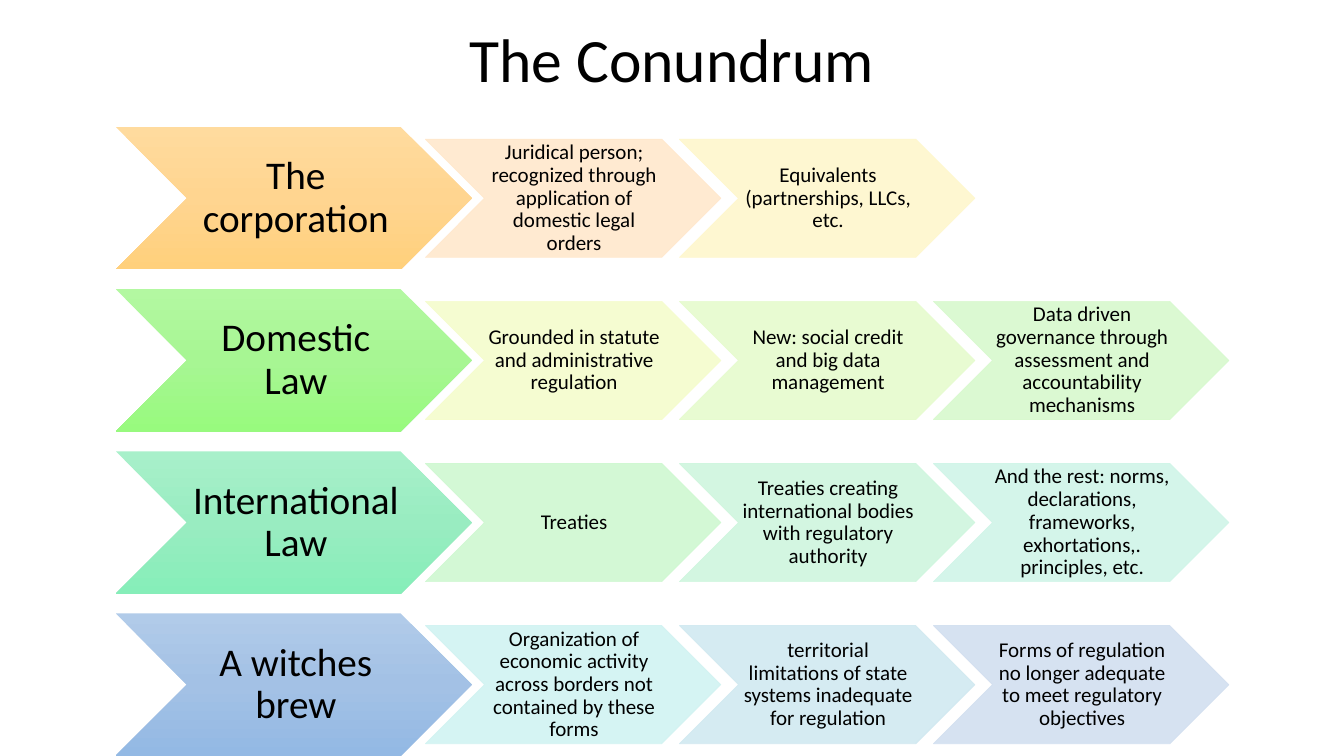
from copy import deepcopy
from dataclasses import dataclass

from pptx import Presentation
from pptx.dml.color import RGBColor
from pptx.enum.shapes import MSO_SHAPE
from pptx.enum.text import MSO_ANCHOR, PP_ALIGN
from pptx.oxml.ns import qn
from pptx.oxml.xmlchemy import OxmlElement
from pptx.util import Pt


@dataclass(frozen=True)
class Theme:
    """Colours and type sizes of the slide."""
    font: str = "Calibri"
    ink: str = "000000"
    title_size: int = 44
    topic_size: int = 28
    point_size: int = 15
    opacity: int = 90


@dataclass(frozen=True)
class Box:
    """A rectangle in points."""
    left: float
    top: float
    width: float
    height: float

    def lengths(self):
        """Return the four sides as lengths."""
        return [Pt(side) for side in (self.left, self.top, self.width, self.height)]


THEME = Theme()
ROWS_BOX = Box(82.8, 90.8, 802, 449.1)
TOPIC_WIDTH, TOPIC_HEIGHT = 254.2, 101.7
POINT_WIDTH, POINT_HEIGHT = 211, 84.4
FIRST_POINT_OFFSET, POINT_STEP = 221.1, 181.45

ROWS = [
    ("The corporation", ("FFDB9E", "FFD590", "FFD07C"), [
        ("Juridical person; recognized through application of domestic legal orders", "FFE8CC"),
        ("Equivalents (partnerships, LLCs, etc.", "FEF7CD"),
    ]),
    ("Domestic Law", ("B3F8A1", "A7F693", "98FA7E"), [
        ("Grounded in statute and administrative regulation", "F5FCCD"),
        ("New: social credit and big data management", "E6FBCE"),
        ("Data driven governance through assessment and accountability mechanisms", "D8F9CE"),
    ]),
    ("International Law", ("A8F0CA", "99ECC1", "86EEB9"), [
        ("Treaties", "CFF8D1"),
        ("Treaties creating international bodies with regulatory authority", "CFF6DE"),
        ("And the rest: norms, declarations, frameworks, exhortations,. principles, etc.", "D0F5E8"),
    ]),
    ("A witches brew", ("B1CBE9", "A3C1E5", "93B9E4"), [
        ("Organization of economic activity across borders not contained by these forms", "D1F3F2"),
        ("territorial limitations of state systems inadequate for regulation", "D1E9F1"),
        ("Forms of regulation no longer adequate to meet regulatory objectives", "D2DFF0"),
    ]),
]


def write(frame, wording, size, inset=None):
    """Write one centred paragraph into a text frame."""
    frame.word_wrap = True
    frame.vertical_anchor = MSO_ANCHOR.MIDDLE
    if inset is not None:
        frame.margin_left, frame.margin_right = Pt(2 * inset), 0
        frame.margin_top = frame.margin_bottom = Pt(inset)
    paragraph = frame.paragraphs[0]
    paragraph.alignment = PP_ALIGN.CENTER
    paragraph.line_spacing = 0.9
    run = paragraph.add_run()
    run.text = wording
    run.font.name = THEME.font
    run.font.size = Pt(size)
    run.font.color.rgb = RGBColor.from_string(THEME.ink)


def add_title(slide, box, wording):
    """Place the slide title in its box."""
    title = slide.shapes.title
    title.left, title.top, title.width, title.height = box.lengths()
    write(title.text_frame, wording, THEME.title_size)


def add_chevron(slide, box):
    """Add a shadowless chevron."""
    chevron = slide.shapes.add_shape(MSO_SHAPE.CHEVRON, *box.lengths())
    chevron.shadow.inherit = False
    return chevron


def add_topic(slide, box, wording, shades):
    """Add the large gradient chevron that opens a row."""
    topic = add_chevron(slide, box)
    topic.line.fill.background()
    topic.fill.gradient()
    topic.fill.gradient_angle = 270
    stop_list = topic._element.spPr.find(".//" + qn("a:gsLst"))
    stop_list.append(deepcopy(stop_list[0]))
    for stop, shade, position in zip(topic.fill.gradient_stops, shades, (0, 0.5, 1)):
        stop.color.rgb = RGBColor.from_string(shade)
        stop.position = position
    write(topic.text_frame, wording, THEME.topic_size, 1.4)


def add_point(slide, box, wording, tint):
    """Add a small translucent chevron with one point."""
    point = add_chevron(slide, box)
    point.fill.solid()
    point.line.width = Pt(0.5)
    for paint in (point.fill.fore_color, point.line.color):
        paint.rgb = RGBColor.from_string(tint)
    for paint in point._element.spPr.iter(qn("a:srgbClr")):
        alpha = OxmlElement("a:alpha")
        alpha.set("val", str(THEME.opacity * 1000))
        paint.append(alpha)
    write(point.text_frame, wording, THEME.point_size, 0.7)


def add_row(slide, box, topic, shades, points):
    """Place a topic and its points from left to right in the row box."""
    add_topic(slide, Box(box.left, box.top, TOPIC_WIDTH, box.height), topic, shades)
    top = box.top + (box.height - POINT_HEIGHT) / 2
    for column, (wording, tint) in enumerate(points):
        left = box.left + FIRST_POINT_OFFSET + column * POINT_STEP
        add_point(slide, Box(left, top, POINT_WIDTH, POINT_HEIGHT), wording, tint)


def add_rows(slide, box):
    """Spread the rows evenly over the height of the box."""
    pitch = (box.height - TOPIC_HEIGHT) / (len(ROWS) - 1)
    for index, row in enumerate(ROWS):
        add_row(slide, Box(box.left, box.top + index * pitch, box.width, TOPIC_HEIGHT), *row)


def main():
    """Build and save the slide."""
    deck = Presentation()
    deck.slide_width, deck.slide_height = Pt(960), Pt(540)
    slide = deck.slides.add_slide(deck.slide_layouts.get_by_name("Title Only"))
    add_title(slide, Box(66, 0, 828, 90), "The Conundrum")
    add_rows(slide, ROWS_BOX)
    deck.save("out.pptx")


if __name__ == "__main__":
    main()
